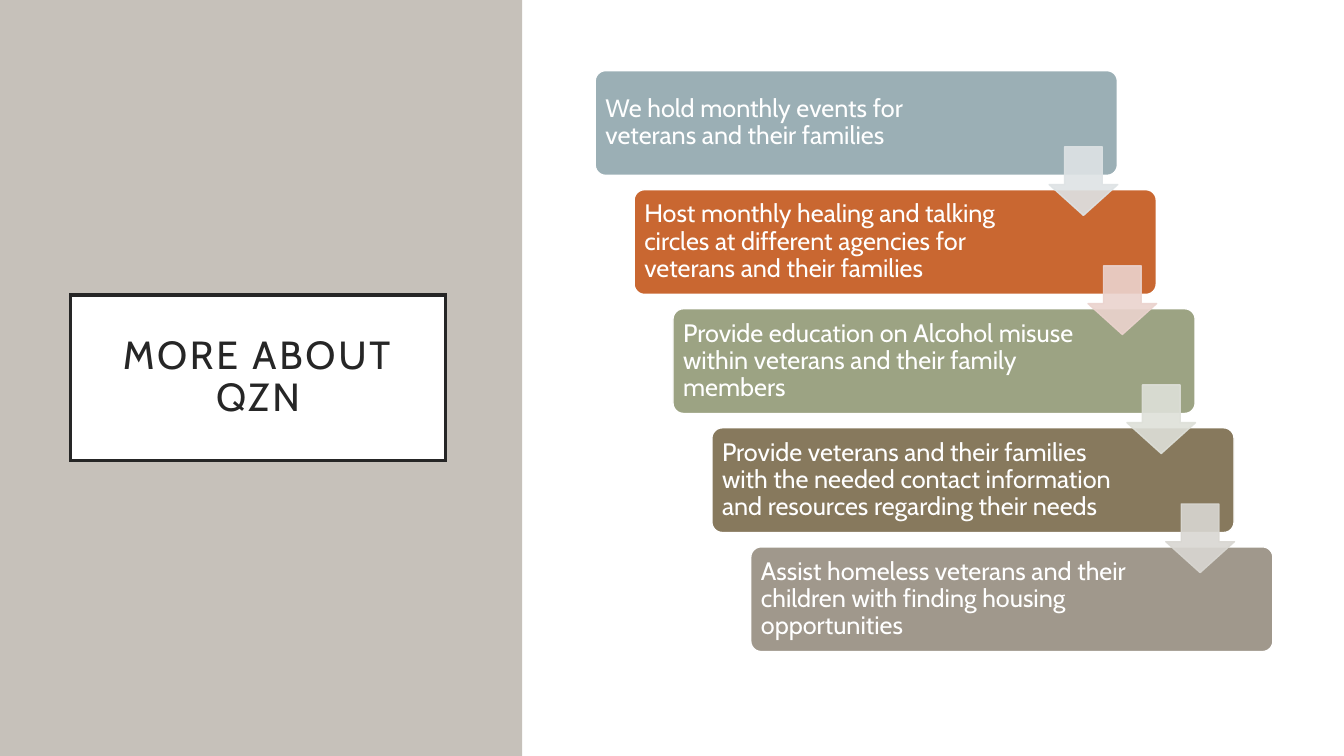
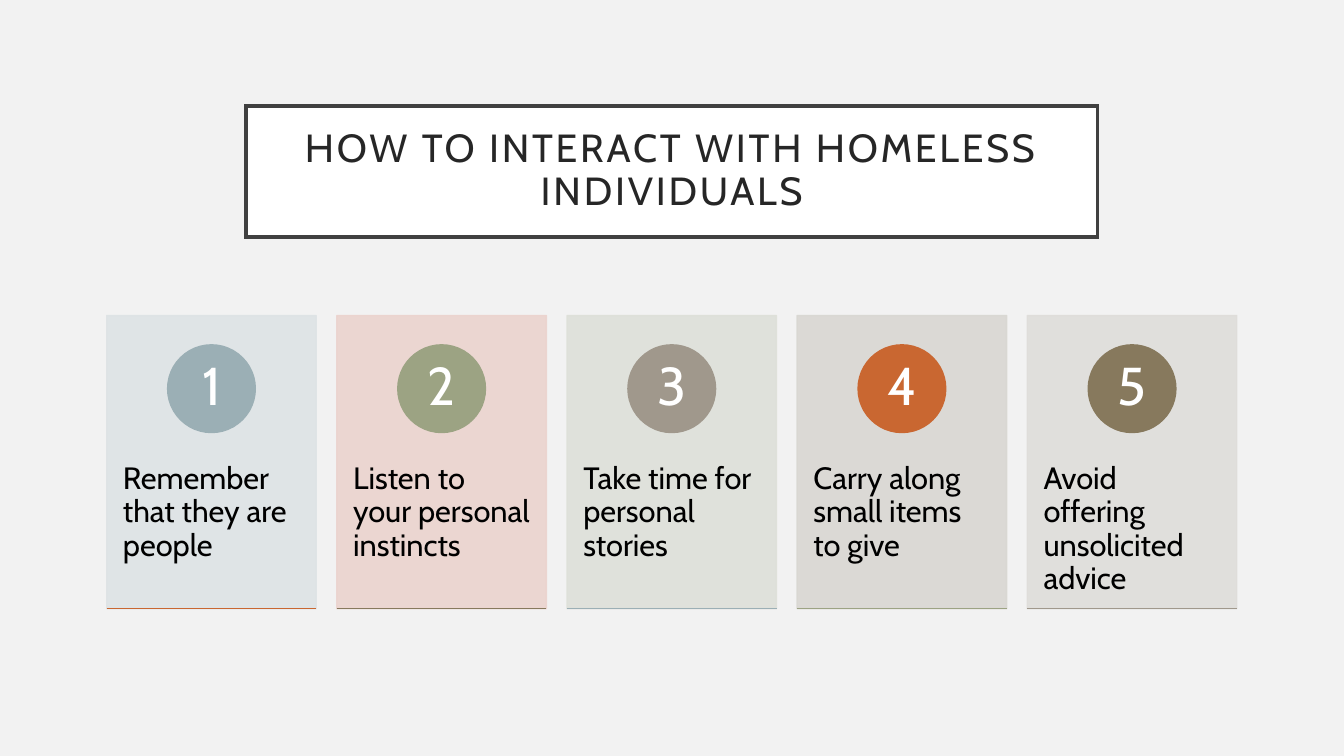
from lxml import etree
from pptx import Presentation
from pptx import util as u
from pptx.dml.color import RGBColor
from pptx.enum import shapes, text
from pptx.oxml.ns import qn

FONT = "Cabin"
WHITE = RGBColor(0xFF, 0xFF, 0xFF)
BLACK = RGBColor(0, 0, 0)
INK = RGBColor(0x26, 0x26, 0x26)
CHARCOAL = RGBColor(0x40, 0x40, 0x40)
PANEL = RGBColor(0xC6, 0xC1, 0xBA)
PALE_GREY = RGBColor(0xF2, 0xF2, 0xF2)

BLUE = RGBColor(0x9B, 0xAF, 0xB5)
ORANGE = RGBColor(0xC9, 0x67, 0x31)
GREEN = RGBColor(0x9C, 0xA3, 0x83)
BROWN = RGBColor(0x87, 0x79, 0x5D)
TAUPE = RGBColor(0xA0, 0x98, 0x8C)
BLUE_TINT = RGBColor(0xDE, 0xE3, 0xE5)
ORANGE_TINT = RGBColor(0xEB, 0xD3, 0xCE)
GREEN_TINT = RGBColor(0xDE, 0xE0, 0xD9)
BROWN_TINT = RGBColor(0xD9, 0xD7, 0xD2)
TAUPE_TINT = RGBColor(0xDF, 0xDD, 0xDA)

SHAPE = shapes.MSO_SHAPE
MIDDLE, TOP = text.MSO_ANCHOR.MIDDLE, text.MSO_ANCHOR.TOP
LEFT, CENTER = text.PP_ALIGN.LEFT, text.PP_ALIGN.CENTER

# Step text, box colour, right text margin (cm)
STEPS = [
    ("We hold monthly events for veterans and their families", BLUE, 3.2),
    ("Host monthly healing and talking circles at different agencies for "
     "veterans and their families", ORANGE, 2.87),
    ("Provide education on Alcohol misuse within veterans and their family "
     "members", GREEN, 2.87),
    ("Provide veterans and their families with the needed contact information "
     "and resources regarding their needs", BROWN, 2.87),
    ("Assist homeless veterans and their children with finding housing "
     "opportunities", TAUPE, 2.87),
]
ARROW_TINTS = [BLUE_TINT, ORANGE_TINT, GREEN_TINT, BROWN_TINT]

# Card text, card tint, circle colour, base line colour
CARDS = [
    ("Remember that they are people", BLUE_TINT, BLUE, ORANGE),
    ("Listen to\vyour personal instincts", ORANGE_TINT, GREEN, BROWN),
    ("Take time for personal stories", GREEN_TINT, TAUPE, BLUE),
    ("Carry along small items to give", BROWN_TINT, ORANGE, GREEN),
    ("Avoid offering unsolicited advice", TAUPE_TINT, BROWN, TAUPE),
]


def add_slide(prs, color):
    s = prs.slides.add_slide(prs.slide_layouts[6])
    s.background.fill.solid()
    s.background.fill.fore_color.rgb = color
    return s


def add_box(s, kind, left, top, width, height, fill, line=None, weight=1,
            opacity=None):
    """Add a flat preset shape; lengths in cm, opacity in percent."""
    sp = s.shapes.add_shape(kind, u.Cm(left), u.Cm(top), u.Cm(width), u.Cm(height))
    sp.shadow.inherit = False
    sp.fill.solid()
    sp.fill.fore_color.rgb = fill
    if line is None:
        sp.line.fill.background()
    else:
        sp.line.color.rgb = line
        sp.line.width = u.Pt(weight)
    if opacity is not None:
        for clr in sp._element.spPr.iter(qn("a:srgbClr")):
            etree.SubElement(clr, qn("a:alpha")).set("val", str(opacity * 1000))
    return sp


def set_text(sp, words, size, color, margins, align=LEFT, anchor=MIDDLE):
    """Write one paragraph; margins are left, top, right, bottom in cm."""
    tf = sp.text_frame
    tf.word_wrap = True
    tf.vertical_anchor = anchor
    (tf.margin_left, tf.margin_top,
     tf.margin_right, tf.margin_bottom) = (u.Cm(m) for m in margins)
    p = tf.paragraphs[0]
    p.text = words
    p.alignment = align
    p.line_spacing = 0.9
    p.font.name = FONT
    p.font.size = u.Pt(size)
    p.font.color.rgb = color
    return p


def add_title(s, words, left, top, width, height, line):
    sp = add_box(s, SHAPE.RECTANGLE, left, top, width, height, WHITE, line, 2.5)
    # Square corners on the frame
    ln = sp._element.spPr.find(qn("a:ln"))
    etree.SubElement(ln, qn("a:miter")).set("lim", "800000")
    p = set_text(sp, words, 28, INK, (0.51,) * 4, CENTER)
    p.runs[0]._r.get_or_add_rPr().set("spc", "200")


def add_base_line(s, left, top, width, color):
    cx = s.shapes.add_connector(shapes.MSO_CONNECTOR.STRAIGHT, u.Cm(left),
                                u.Cm(top), u.Cm(left + width), u.Cm(top))
    cx.line.color.rgb = color
    cx.line.width = u.Pt(1)
    etree.SubElement(cx._element.spPr, qn("a:effectLst"))


def add_staircase(s):
    shift, drop = 0.98, 3.0
    for i, (words, color, right) in enumerate(STEPS):
        sp = add_box(s, SHAPE.ROUNDED_RECTANGLE, 15 + i * shift,
                     1.78 + i * drop, 13.16, 2.64, color, WHITE)
        sp.adjustments[0] = 0.1
        set_text(sp, words, 18, WHITE, (0.18, 0.18, right, 0.18))
    # Arrows lie over the boxes they join
    for i, tint in enumerate(ARROW_TINTS):
        sp = add_box(s, SHAPE.DOWN_ARROW, 26.44 + i * shift, 3.7 + i * drop,
                     1.73, 1.73, tint, tint, opacity=90)
        sp.adjustments[0] = 0.55
        sp.adjustments[1] = 0.45


def add_card(s, number, words, tint, color, base):
    left, top, width, height = 2.69 + (number - 1) * 5.8, 7.95, 5.28, 7.39
    diameter = 2.21
    card = add_box(s, SHAPE.RECTANGLE, left, top, width, height, tint, tint,
                   opacity=90)
    set_text(card, words, 22, BLACK, (0.41, 3.72, 0.36, 0), anchor=TOP)
    circle = add_box(s, SHAPE.OVAL, left + (width - diameter) / 2, top + 0.74,
                     diameter, diameter, color, color)
    set_text(circle, str(number), 38, WHITE, (0.18, 0.03, 0.18, 0.03), CENTER)
    add_base_line(s, left, top + height, width, base)


def main():
    prs = Presentation()
    prs.slide_width, prs.slide_height = u.Cm(33.87), u.Cm(19.05)

    # Slide 1: side panel and staircase
    s = add_slide(prs, WHITE)
    add_box(s, SHAPE.RECTANGLE, 0, 0, 13.16, 19.05, PANEL)
    add_title(s, "MORE ABOUT QZN", 1.78, 7.44, 9.45, 4.17, INK)
    add_staircase(s)

    # Slide 2: numbered cards
    s = add_slide(prs, PALE_GREY)
    add_title(s, "HOW TO INTERACT WITH HOMELESS INDIVIDUALS",
              6.2, 2.67, 21.46, 3.3, CHARCOAL)
    for number, card in enumerate(CARDS, 1):
        add_card(s, number, *card)

    prs.save("out.pptx")


if __name__ == "__main__":
    main()
